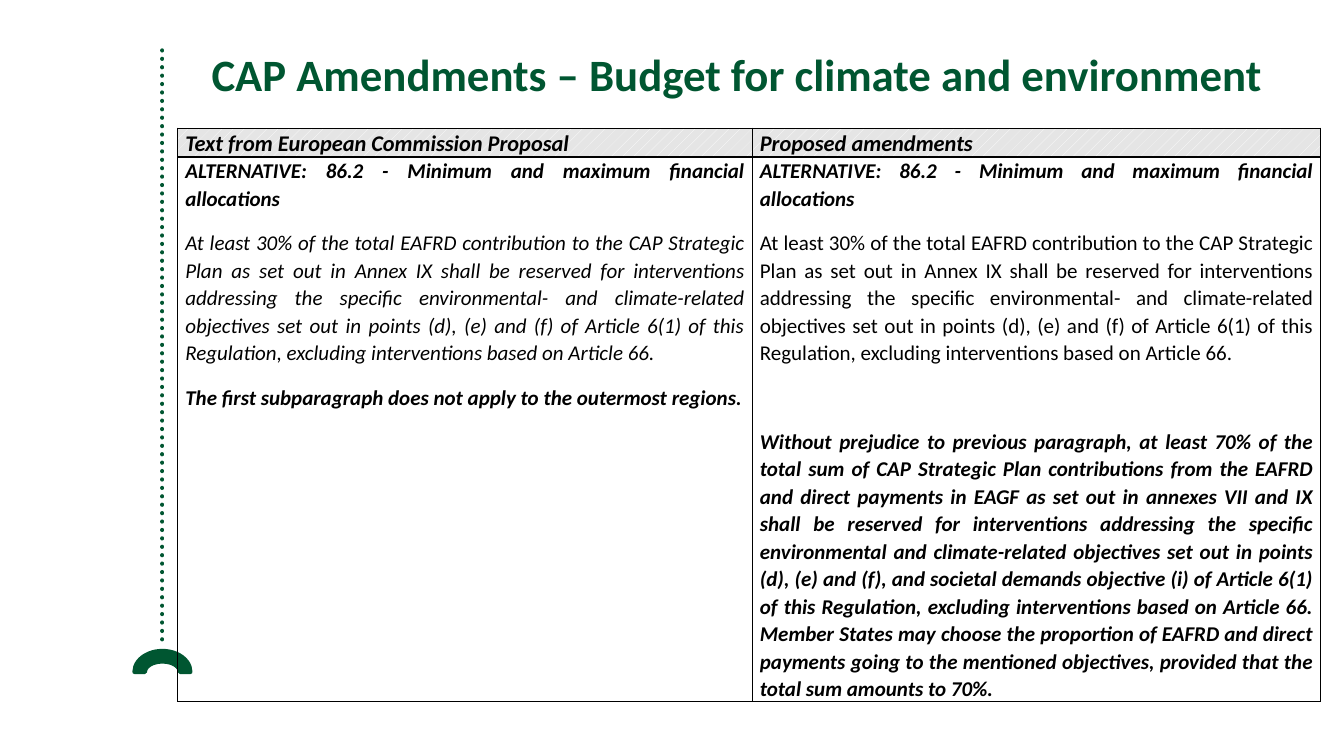
from lxml import etree
from pptx import Presentation
from pptx.dml.color import RGBColor
from pptx.enum.dml import MSO_LINE, MSO_PATTERN
from pptx.enum.shapes import MSO_CONNECTOR, MSO_SHAPE
from pptx.enum.text import MSO_ANCHOR, PP_ALIGN
from pptx.oxml import parse_xml
from pptx.oxml.ns import nsdecls, qn
from pptx.util import Pt

# Content: each paragraph is (text, bold, italic, space before)
TITLE = "CAP Amendments – Budget for climate and environment"
ARTICLE = "ALTERNATIVE: 86.2 - Minimum and maximum financial allocations"
RESERVE = (
    "At least 30% of the total EAFRD contribution to the CAP Strategic Plan as set out "
    "in Annex IX shall be reserved for interventions addressing the specific "
    "environmental- and climate-related objectives set out in points (d), (e) and (f) "
    "of Article 6(1) of this Regulation, excluding interventions based on Article 66."
)
OUTERMOST = "The first subparagraph does not apply to the outermost regions."
AMENDMENT = (
    "Without prejudice to previous paragraph, at least 70% of the total sum of CAP "
    "Strategic Plan contributions from the EAFRD and direct payments in EAGF as set out "
    "in annexes VII and IX shall be reserved for interventions addressing the specific "
    "environmental and climate-related objectives set out in points (d), (e) and (f), "
    "and societal demands objective (i) of Article 6(1) of this Regulation, excluding "
    "interventions based on Article 66. Member States may choose the proportion of "
    "EAFRD and direct payments going to the mentioned objectives, provided that the "
    "total sum amounts to 70%."
)
ROWS = [
    [
        [("Text from European Commission Proposal", True, True, 0)],
        [("Proposed amendments", True, True, 0)],
    ],
    [
        [(ARTICLE, True, True, 0), (RESERVE, False, True, 6), (OUTERMOST, True, True, 6)],
        [(ARTICLE, True, True, 0), (RESERVE, False, False, 6), (AMENDMENT, True, True, 37.5)],
    ],
]

# Formats
GREEN = RGBColor(0x00, 0x56, 0x31)
BLACK = RGBColor(0x00, 0x00, 0x00)
WHITE = RGBColor(0xFF, 0xFF, 0xFF)
GREY = RGBColor(0xE5, 0xE5, 0xE5)
FONT = "Calibri"
COLUMN_WIDTHS = [410.4, 406.1]
ROW_HEIGHTS = [20.7, 389]
ROW_FORMATS = [
    {"size": 16, "alignment": PP_ALIGN.LEFT},
    {"size": 15, "alignment": PP_ALIGN.JUSTIFY},
]
CELL_FORMAT = {
    "margin_left": Pt(5.4), "margin_right": Pt(5.4), "margin_top": 0, "margin_bottom": 0,
    "vertical_anchor": MSO_ANCHOR.TOP,
}


def set_all(target, values):
    for name, value in values.items():
        setattr(target, name, value)


def set_font(font, size, color, bold, italic=False):
    set_all(font, {"name": FONT, "size": Pt(size), "bold": bold, "italic": italic})
    font.color.rgb = color


def set_line(line):
    line.color.rgb = GREEN
    line.width = Pt(3)


def add_borders(cell):
    properties = cell._tc.get_or_add_tcPr()
    for index, side in enumerate(("lnL", "lnR", "lnT", "lnB")):
        properties.insert(index, parse_xml(
            f'<a:{side} {nsdecls("a")} w="{Pt(1)}"><a:solidFill>'
            f'<a:srgbClr val="{BLACK}"/></a:solidFill></a:{side}>'
        ))


def fill_cell(cell, paragraphs, row_format, is_header):
    set_all(cell, CELL_FORMAT)
    if is_header:
        cell.fill.patterned()
        cell.fill.pattern = MSO_PATTERN.PERCENT_10
        cell.fill.fore_color.rgb = WHITE
        cell.fill.back_color.rgb = GREY
    else:
        cell.fill.background()
    add_borders(cell)
    frame = cell.text_frame
    for index, (text, bold, italic, space_before) in enumerate(paragraphs):
        paragraph = frame.add_paragraph() if index else frame.paragraphs[0]
        set_all(paragraph, {
            "alignment": row_format["alignment"], "line_spacing": 1.07,
            "space_before": Pt(space_before), "space_after": Pt(6),
        })
        run = paragraph.add_run()
        run.text = text
        set_font(run.font, row_format["size"], BLACK, bold, italic)


def main():
    presentation = Presentation()
    set_all(presentation, {"slide_width": Pt(960), "slide_height": Pt(540)})
    slide = presentation.slides.add_slide(presentation.slide_layouts[6])
    shapes = slide.shapes

    # Dotted line and arc at the left
    dotted = shapes.add_connector(MSO_CONNECTOR.STRAIGHT, Pt(116), Pt(36), Pt(116), Pt(461.5))
    set_line(dotted.line)
    dotted.line.dash_style = MSO_LINE.ROUND_DOT
    line_properties = dotted.element.spPr
    line_properties.find(qn("a:ln")).set("cap", "rnd")
    etree.SubElement(line_properties, qn("a:effectLst"))

    arc = shapes.add_shape(MSO_SHAPE.BLOCK_ARC, Pt(96), Pt(465), Pt(40), Pt(30))
    arc.shadow.inherit = False
    arc.fill.solid()
    arc.fill.fore_color.rgb = GREEN
    set_line(arc.line)

    # Title
    title = shapes.add_textbox(Pt(144), Pt(30), Pt(768), Pt(90)).text_frame
    title.word_wrap = True
    title_run = title.paragraphs[0].add_run()
    title_run.text = TITLE
    set_font(title_run.font, 32, GREEN, True)

    # Comparison table
    table = shapes.add_table(
        len(ROWS), len(COLUMN_WIDTHS), Pt(127), Pt(91.5),
        Pt(sum(COLUMN_WIDTHS)), Pt(sum(ROW_HEIGHTS)),
    ).table
    set_all(table, {"first_row": False, "horz_banding": False})
    for column, width in zip(table.columns, COLUMN_WIDTHS):
        column.width = Pt(width)
    for row_index, (row, height) in enumerate(zip(table.rows, ROW_HEIGHTS)):
        row.height = Pt(height)
        for cell, paragraphs in zip(row.cells, ROWS[row_index]):
            fill_cell(cell, paragraphs, ROW_FORMATS[row_index], row_index == 0)

    presentation.save("out.pptx")


if __name__ == "__main__":
    main()
